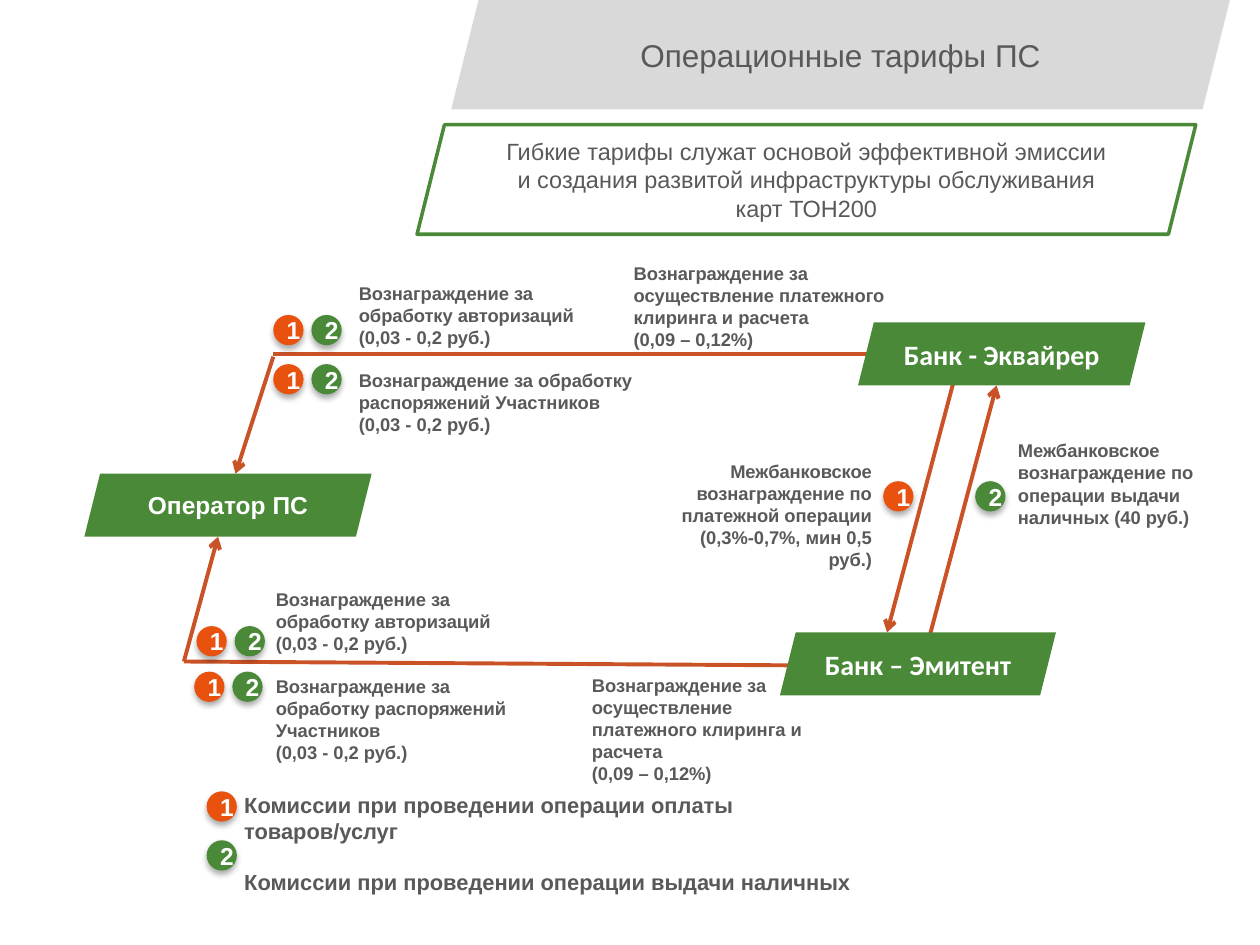
from lxml import etree
from pptx import Presentation
from pptx import util as u
from pptx.dml.color import RGBColor
from pptx.enum import shapes, text
from pptx.oxml.ns import qn

Pt = u.Pt
GREEN = RGBColor(0x4A, 0x89, 0x38)
ORANGE = RGBColor(0xE9, 0x51, 0x0E)
RUST = RGBColor(0xCA, 0x52, 0x27)
SILVER = RGBColor(0xD9, 0xD9, 0xD9)
GRAY = RGBColor(0x59, 0x59, 0x59)
WHITE = RGBColor(0xFF, 0xFF, 0xFF)

BADGE = 17.3
BADGE_FILL = {"1": ORANGE, "2": GREEN}
LEFT, CENTER, RIGHT = text.PP_ALIGN.LEFT, text.PP_ALIGN.CENTER, text.PP_ALIGN.RIGHT

CLEARING = ["Вознаграждение за осуществление платежного клиринга и расчета",
            "(0,09 – 0,12%)"]
AUTHORIZATION = ["Вознаграждение за", "обработку авторизаций", "(0,03 - 0,2 руб.)"]
ORDERS = ["Вознаграждение за обработку распоряжений Участников", "(0,03 - 0,2 руб.)"]


def write(tf, blocks, size, color, bold=True, align=LEFT, name="Arial", gap=0):
    """Write blocks of paragraphs, with a gap before every block but the first."""
    fmt = {"size": Pt(size), "bold": bold, "name": name}
    p = None
    for n, block in enumerate(blocks):
        for m, line in enumerate(block):
            p = tf.paragraphs[0] if p is None else tf.add_paragraph()
            p.alignment = align
            if n and not m:
                p.space_before = Pt(gap)
            r = p.add_run()
            r.text = line
            for key, value in fmt.items():
                setattr(r.font, key, value)
            r.font.color.rgb = color


def add_shape(s, kind, box, fill=None, line=None):
    sp = s.shapes.add_shape(kind, *map(Pt, box))
    sp.shadow.inherit = False
    if fill is None:
        sp.fill.background()
    else:
        sp.fill.solid()
        sp.fill.fore_color.rgb = fill
    if line is None:
        sp.line.fill.background()
    else:
        sp.line.color.rgb = line
        sp.line.width = Pt(2)
    sp.text_frame.vertical_anchor = text.MSO_ANCHOR.MIDDLE
    return sp


def add_panel(s, box, lines, size, color, fill=None, line=None, **style):
    sp = add_shape(s, shapes.MSO_SHAPE.PARALLELOGRAM, box, fill, line)
    write(sp.text_frame, [lines], size, color, align=CENTER, **style)


def add_label(s, box, blocks, size=10.5, wrap=True, **style):
    tf = s.shapes.add_textbox(*map(Pt, box)).text_frame
    tf.word_wrap = wrap
    write(tf, blocks, size, GRAY, **style)


def add_badge(s, x, y, number):
    sp = add_shape(s, shapes.MSO_SHAPE.OVAL, (x, y, BADGE, BADGE), BADGE_FILL[number])
    write(sp.text_frame, [[number]], 14, WHITE, align=CENTER)
    effects = sp._element.spPr.find(qn("a:effectLst"))
    shadow = etree.SubElement(effects, qn("a:outerShdw"), blurRad=str(Pt(3.5)),
                              dist=str(Pt(2.2)), dir="5400000", rotWithShape="0")
    black = etree.SubElement(shadow, qn("a:srgbClr"), val="000000")
    etree.SubElement(black, qn("a:alpha"), val="32000")


def add_line(s, start, end, arrow=True):
    c = s.shapes.add_connector(shapes.MSO_CONNECTOR.STRAIGHT, *map(Pt, start + end))
    c.line.color.rgb = RUST
    c.line.width = Pt(2.25)
    if arrow:
        etree.SubElement(c.line._get_or_add_ln(), qn("a:tailEnd"), type="arrow")
    etree.SubElement(c._element.spPr, qn("a:effectLst"))


def main():
    prs = Presentation()
    prs.slide_width, prs.slide_height = Pt(720), Pt(540)
    s = prs.slides.add_slide(prs.slide_layouts[6])

    # Title and subtitle
    add_panel(s, (257.8, 0, 445, 62.6), ["Операционные тарифы ПС"], 18, GRAY,
              fill=SILVER, bold=False)
    add_panel(s, (238.3, 71.3, 445, 62.6),
              ["Гибкие тарифы служат основой эффективной эмиссии",
               "и создания развитой инфраструктуры обслуживания карт ТОН200"],
              13.4, GRAY, line=GREEN, bold=False)

    # Payment flows
    for start, end, arrow in [
        ((530, 368), (569.5, 220.3), True),
        ((547.2, 209.5), (506.9, 361.4), True),
        ((517.7, 202.3), (156.2, 202.3), False),
        ((156.2, 203.8), (134.6, 270.7), True),
        ((450.7, 380.2), (105.1, 378), False),
        ((105.1, 378), (124.6, 306.7), True),
    ]:
        add_line(s, start, end, arrow)

    # Participants
    for x, y, w, name, size, font in [
        (48.2, 270.7, 164.2, "Оператор ПС", 14, "Arial"),
        (445.7, 361.4, 157.7, "Банк – Эмитент", 16, "Calibri"),
        (490.3, 184.3, 164.2, "Банк - Эквайрер", 16, "Calibri"),
    ]:
        add_panel(s, (x, y, w, 36), [name], size, WHITE, fill=GREEN, name=font)

    # Fees between the banks
    add_label(s, (370.8, 259.2, 134.6, 55.4),
              [["Межбанковское вознаграждение по платежной операции "
                "(0,3%-0,7%, мин 0,5 руб.)"]], align=RIGHT)
    add_label(s, (574.6, 247.7, 136.1, 55.4),
              [["Межбанковское вознаграждение по операции выдачи наличных (40 руб.)"]])

    # Fees paid to the operator
    for box in [(355, 146.2, 169.2, 67.7), (331.2, 381.6, 154.1, 55.4)]:
        add_label(s, box, [CLEARING])
    for box in [(198, 157.7, 184.3, 92.2), (150.5, 332.6, 164.2, 92.2)]:
        add_label(s, box, [AUTHORIZATION, ORDERS], gap=12)

    # Legend
    add_label(s, (132.5, 448.6, 374.4, 65.5),
              [["Комиссии при проведении операции оплаты товаров/услуг"],
               ["Комиссии при проведении операции выдачи наличных"]],
              size=12.5, wrap=False, gap=14.4)

    # Numbered badges: pairs on the operator flows, then single ones
    for x, y in [(156.2, 180), (156.2, 208.1), (112.3, 357.8), (111, 383.8)]:
        for n, number in enumerate("12"):
            add_badge(s, x + n * 21.8, y, number)
    for x, y, number in [(504.7, 275, "1"), (557.3, 275, "2"),
                         (118.1, 452.2, "1"), (118.1, 480.2, "2")]:
        add_badge(s, x, y, number)

    prs.save("out.pptx")


if __name__ == "__main__":
    main()
